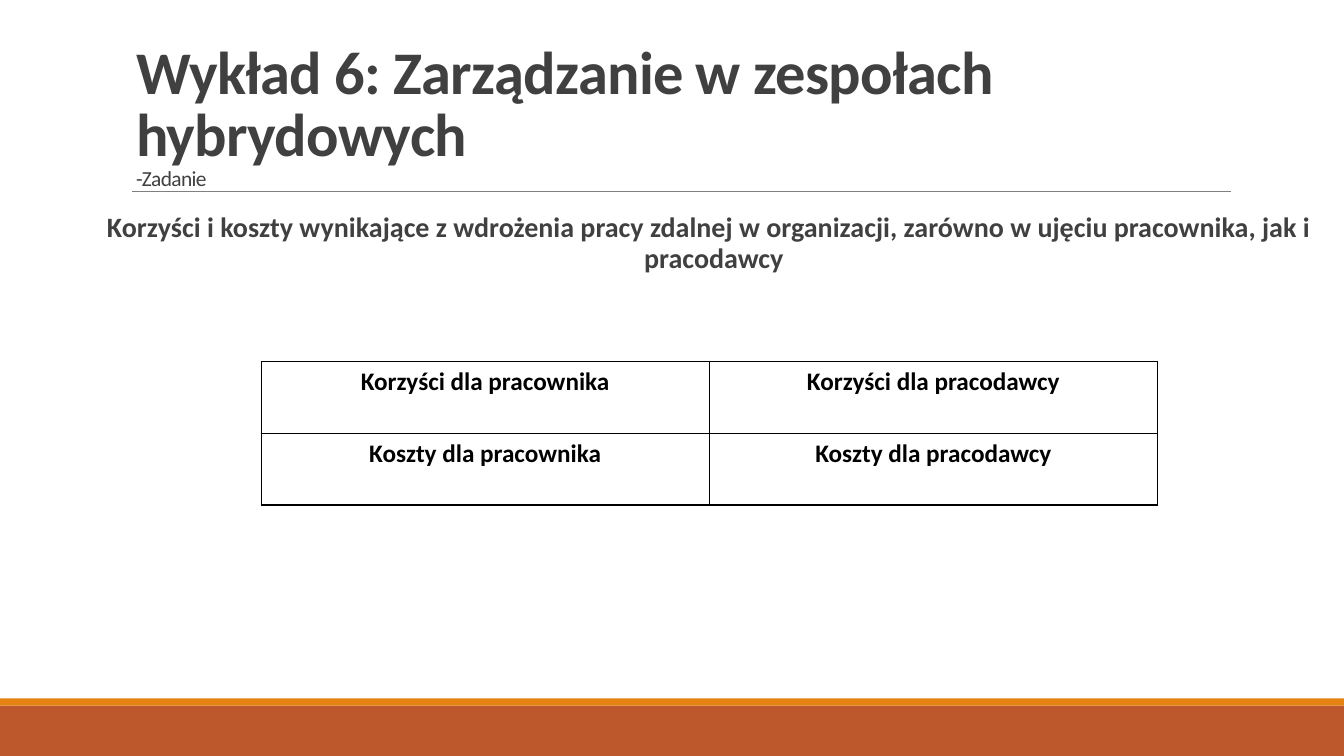
from lxml import etree
from pptx import Presentation
from pptx.dml.color import RGBColor
from pptx.enum.shapes import MSO_CONNECTOR, MSO_SHAPE
from pptx.enum.text import MSO_ANCHOR, MSO_AUTO_SIZE, PP_ALIGN
from pptx.oxml.ns import qn
from pptx.util import Inches, Pt

RECTANGLE = MSO_SHAPE.RECTANGLE
STRAIGHT = MSO_CONNECTOR.STRAIGHT
TOP, BOTTOM = MSO_ANCHOR.TOP, MSO_ANCHOR.BOTTOM
CENTER = PP_ALIGN.CENTER
NO_AUTOFIT = MSO_AUTO_SIZE.NONE

RUST = RGBColor(0xBD, 0x58, 0x2C)
ORANGE = RGBColor(0xE4, 0x83, 0x12)
GRAY = RGBColor(0x80, 0x80, 0x80)
DARK = RGBColor(0x40, 0x40, 0x40)
BLACK = RGBColor(0, 0, 0)


class SlideBuilder:
    font = "Calibri"

    def __init__(self, page):
        self.page = page

    def band(self, top, height, color):
        band = self.page.shapes.add_shape(
            RECTANGLE, 0, Inches(top), Inches(13.33), Inches(height))
        band.shadow.inherit = False
        band.fill.solid()
        band.fill.fore_color.rgb = color
        band.line.fill.background()

    def rule(self, left, right, top):
        rule = self.page.shapes.add_connector(
            STRAIGHT, Inches(left), Inches(top), Inches(right), Inches(top))
        rule.line.color.rgb = GRAY
        rule.line.width = Pt(0.5)
        etree.SubElement(rule._element.spPr, qn("a:effectLst"))

    def span(self, para, text, size, color=DARK, bold=True):
        span = para.add_run()
        span.text = text
        span.font.name = self.font
        span.font.size = Pt(size)
        span.font.bold = bold
        span.font.color.rgb = color
        return span

    def place(self, box, left, top, width, height, anchor):
        box.left, box.top = Inches(left), Inches(top)
        box.width, box.height = Inches(width), Inches(height)
        frame = box.text_frame
        frame.word_wrap = True
        frame.auto_size = NO_AUTOFIT
        frame.vertical_anchor = anchor
        return frame

    def title(self, heading, subtitle):
        frame = self.place(self.page.shapes.title, 1.25, 0.35, 11, 1.59, BOTTOM)
        para = frame.paragraphs[0]
        para.alignment = PP_ALIGN.LEFT
        para.line_spacing = 0.85
        spans = [self.span(para, heading, 43.2)]
        para.add_line_break()
        spans.append(self.span(para, subtitle, 15.3, bold=False))
        for span in spans:
            span.font._element.set("spc", "-50")

    def body(self, text):
        frame = self.place(self.page.placeholders[1], 0.85, 2.07, 12.36, 0.92, TOP)
        frame.margin_left = frame.margin_right = 0
        para = frame.paragraphs[0]
        para.alignment = CENTER
        para.line_spacing = 0.9
        para.space_before, para.space_after = Pt(12), Pt(2)
        settings = para._p.get_or_add_pPr()
        settings.set("marL", str(Inches(0.1)))
        settings.set("indent", str(Inches(-0.1)))
        etree.SubElement(settings, qn("a:buNone"))
        self.span(para, text, 20)

    def border(self, cell):
        settings = cell._tc.get_or_add_tcPr()
        for index, side in enumerate(("lnL", "lnR", "lnT", "lnB")):
            line = etree.Element(qn(f"a:{side}"), w=str(Pt(1)))
            fill = etree.SubElement(line, qn("a:solidFill"))
            etree.SubElement(fill, qn("a:srgbClr"), val=str(BLACK))
            settings.insert(index, line)

    def table(self, rows, left, top, width, height):
        table = self.page.shapes.add_table(
            len(rows), len(rows[0]), Inches(left), Inches(top),
            Inches(width), Inches(height)).table
        for row, texts in enumerate(rows):
            for column, text in enumerate(texts):
                cell = table.cell(row, column)
                cell.fill.background()
                self.border(cell)
                para = cell.text_frame.paragraphs[0]
                para.alignment = CENTER
                self.span(para, text, 18, BLACK)


def main():
    deck = Presentation()
    deck.slide_width, deck.slide_height = Inches(13.33), Inches(7.5)
    slide = SlideBuilder(deck.slides.add_slide(deck.slide_layouts[1]))

    # Footer bands and title rule
    slide.band(7, 0.5, RUST)
    slide.band(6.93, 0.07, ORANGE)
    slide.rule(1.31, 12.21, 1.9)

    # Title and task
    slide.title("Wykład 6: Zarządzanie w zespołach hybrydowych", "-Zadanie")
    slide.body("Korzyści i koszty wynikające z wdrożenia pracy zdalnej "
               "w organizacji, zarówno w ujęciu pracownika, jak i pracodawcy")

    # Benefits and costs
    sides = ("pracownika", "pracodawcy")
    rows = [[f"{kind} dla {side}" for side in sides]
            for kind in ("Korzyści", "Koszty")]
    slide.table(rows, 2.59, 3.59, 8.89, 1.42)

    deck.save("out.pptx")


if __name__ == "__main__":
    main()
